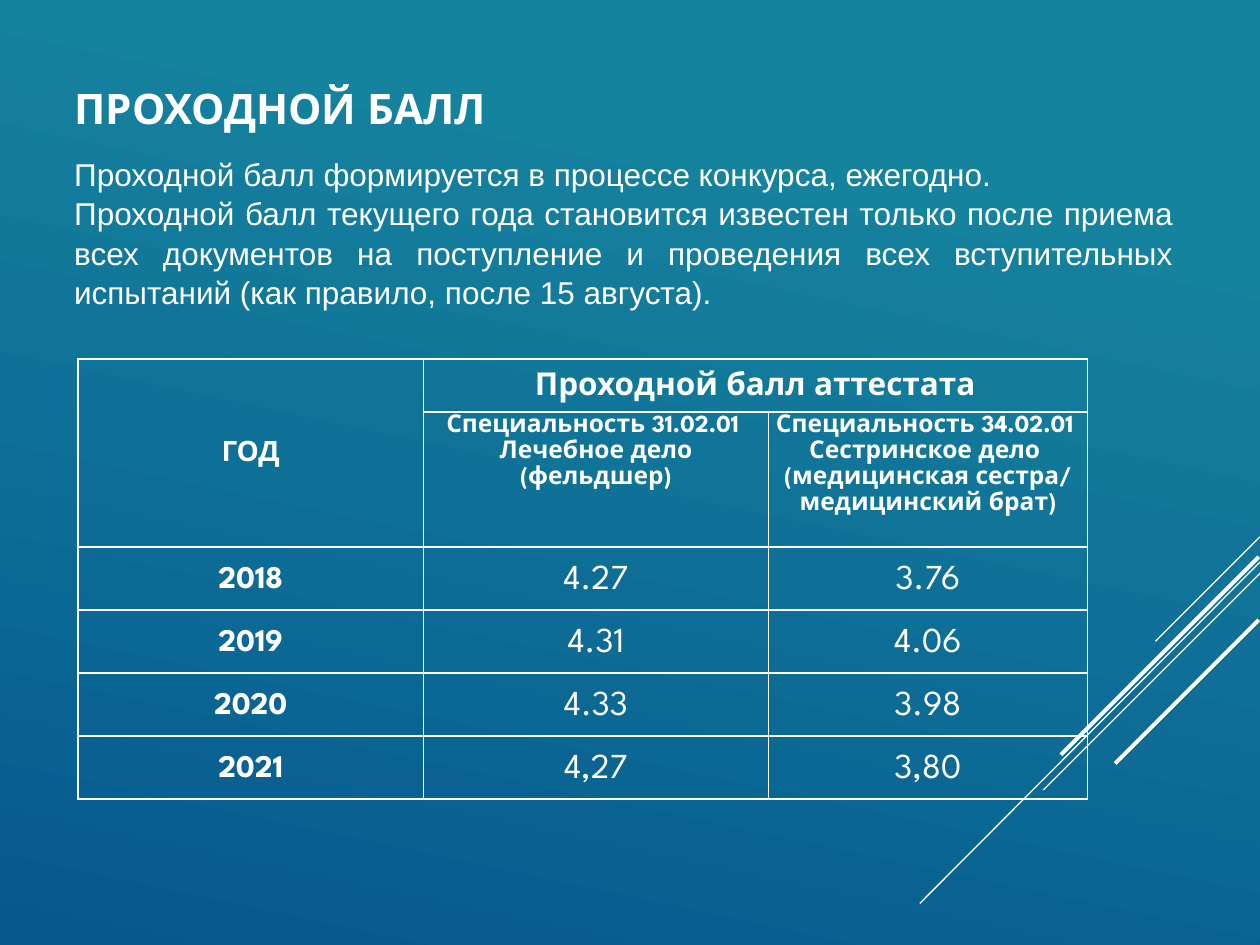
from pptx import Presentation
from pptx.dml.color import RGBColor
from pptx.enum import shapes, text
from pptx.oxml import ns, xmlchemy
from pptx.util import Inches, Pt

WHITE = RGBColor(0xFF, 0xFF, 0xFF)
TEAL = RGBColor(0x15, 0x82, 0x9E)
BLUE = RGBColor(0x06, 0x58, 0x8E)
HEAD_FONT, BODY_FONT = "League Spartan", "Arial"
CENTER, JUSTIFY, LEFT = text.PP_ALIGN.CENTER, text.PP_ALIGN.JUSTIFY, text.PP_ALIGN.LEFT
MIDDLE, TOP = text.MSO_ANCHOR.MIDDLE, text.MSO_ANCHOR.TOP

TITLE = "ПРОХОДНОЙ БАЛЛ"
INTRO = [
    ("Проходной балл формируется в процессе конкурса, ежегодно.", LEFT),
    ("Проходной балл текущего года становится известен только после приема "
     "всех документов на поступление и проведения всех вступительных "
     "испытаний (как правило, после 15 августа).", JUSTIFY),
]
YEAR_HEAD = "ГОД"
SCORE_HEAD = "Проходной балл аттестата"
SPECIALTIES = [
    ["Специальность 31.02.01 ", "Лечебное дело (фельдшер)"],
    ["Специальность 34.02.01 \nСестринское дело \n(медицинская сестра/\nмедицинский брат)"],
]
SCORES = [
    ("2018", "4.27", "3.76"),
    ("2019", "4.31", "4.06"),
    ("2020", "4.33", "3.98"),
    ("2021", "4,27", "3,80"),
]
COLUMN_WIDTHS = [2.74, 2.74, 2.53]
ROW_HEIGHTS = [0.42, 1.07] + [0.5] * len(SCORES)
# Start x, start y, end x, end y, width in points
DIAGONALS = [
    (10, 4.26, 9.17, 5.09, 0.75),
    (10, 4.46, 7.3, 7.17, 0.75),
    (10, 4.55, 8.28, 6.27, 0.75),
    (9.99, 4.42, 8.42, 5.99, 2.25),
    (9.99, 4.92, 8.85, 6.06, 2.25),
]


def add_span(para, words, font, size, bold=False):
    span = para.add_run()
    span.text = words
    span.font.name = font
    span.font.size = Pt(size)
    span.font.bold = bold
    span.font.color.rgb = WHITE


def paragraphs(frame, count):
    return [frame.paragraphs[0]] + [frame.add_paragraph() for _ in range(count - 1)]


def set_borders(cell):
    """Draw a 1 pt white line on all four sides; borders must precede the fill."""
    props = cell._tc.get_or_add_tcPr()
    for position, side in enumerate(("lnL", "lnR", "lnT", "lnB")):
        line = xmlchemy.OxmlElement(f"a:{side}")
        line.set("w", str(Pt(1)))
        fill = xmlchemy.OxmlElement("a:solidFill")
        color = xmlchemy.OxmlElement("a:srgbClr")
        color.set("val", str(WHITE))
        fill.append(color)
        line.append(fill)
        props.insert(position, line)


def fill_cell(cell, lines, size, bold=True, anchor=MIDDLE):
    cell.vertical_anchor = anchor
    for para, words in zip(paragraphs(cell.text_frame, len(lines)), lines):
        para.alignment = CENTER
        para.line_spacing = 1.15
        for index, part in enumerate(words.split("\n")):
            if index:
                para.add_line_break()
            add_span(para, part, HEAD_FONT, size, bold)


def add_background(page):
    fill = page.background.fill
    fill.gradient()
    fill.gradient_angle = 258
    for stop, (place, color) in zip(fill.gradient_stops, [(0.21, TEAL), (1, BLUE)]):
        stop.position = place
        stop.color.rgb = color


def add_diagonals(page):
    for *ends, width in DIAGONALS:
        line = page.shapes.add_connector(
            shapes.MSO_CONNECTOR.STRAIGHT, *[Inches(value) for value in ends])
        line.line.color.rgb = WHITE
        line.line.width = Pt(width)
        line._element.spPr.append(xmlchemy.OxmlElement("a:effectLst"))


def add_title(page):
    title = page.shapes.title
    title.left, title.top = Inches(0.49), Inches(0.54)
    title.width, title.height = Inches(7.17), Inches(0.63)
    title.text_frame.vertical_anchor = MIDDLE
    para = title.text_frame.paragraphs[0]
    para.alignment = LEFT
    add_span(para, TITLE, HEAD_FONT, 24, True)


def add_intro(page):
    box = page.shapes.add_textbox(Inches(0.49), Inches(1.17), Inches(8.92), Inches(1.62))
    box.text_frame.word_wrap = True
    for para, (words, align) in zip(paragraphs(box.text_frame, len(INTRO)), INTRO):
        para.alignment = align
        para.line_spacing = 1.04
        add_span(para, words, BODY_FONT, 18)


def add_score_table(page):
    frame = page.shapes.add_table(
        len(ROW_HEIGHTS), len(COLUMN_WIDTHS), Inches(0.62), Inches(2.85),
        Inches(sum(COLUMN_WIDTHS)), Inches(sum(ROW_HEIGHTS)))
    table = frame.table
    table.first_row = table.horz_banding = False
    for column, width in zip(table.columns, COLUMN_WIDTHS):
        column.width = Inches(width)
    for row, height in zip(table.rows, ROW_HEIGHTS):
        row.height = Inches(height)
    for cell in table.iter_cells():
        cell.margin_left = cell.margin_right = Inches(0.05)
        cell.margin_top = cell.margin_bottom = 0
        cell.fill.background()
        set_borders(cell)

    table.cell(0, 0).merge(table.cell(1, 0))
    table.cell(0, 1).merge(table.cell(0, 2))
    fill_cell(table.cell(0, 0), [YEAR_HEAD], 16)
    fill_cell(table.cell(0, 1), [SCORE_HEAD], 18)
    for column, lines in enumerate(SPECIALTIES, start=1):
        fill_cell(table.cell(1, column), lines, 14, anchor=TOP)
    for row, (year, *scores) in enumerate(SCORES, start=2):
        fill_cell(table.cell(row, 0), [year], 18)
        for column, score in enumerate(scores, start=1):
            fill_cell(table.cell(row, column), [score], 20, bold=False)


def main():
    deck = Presentation()
    deck.slide_width, deck.slide_height = Inches(10), Inches(7.5)
    page = deck.slides.add_slide(deck.slide_layouts[5])
    add_background(page)
    add_diagonals(page)
    add_title(page)
    add_intro(page)
    add_score_table(page)
    deck.save("out.pptx")


if __name__ == "__main__":
    main()
